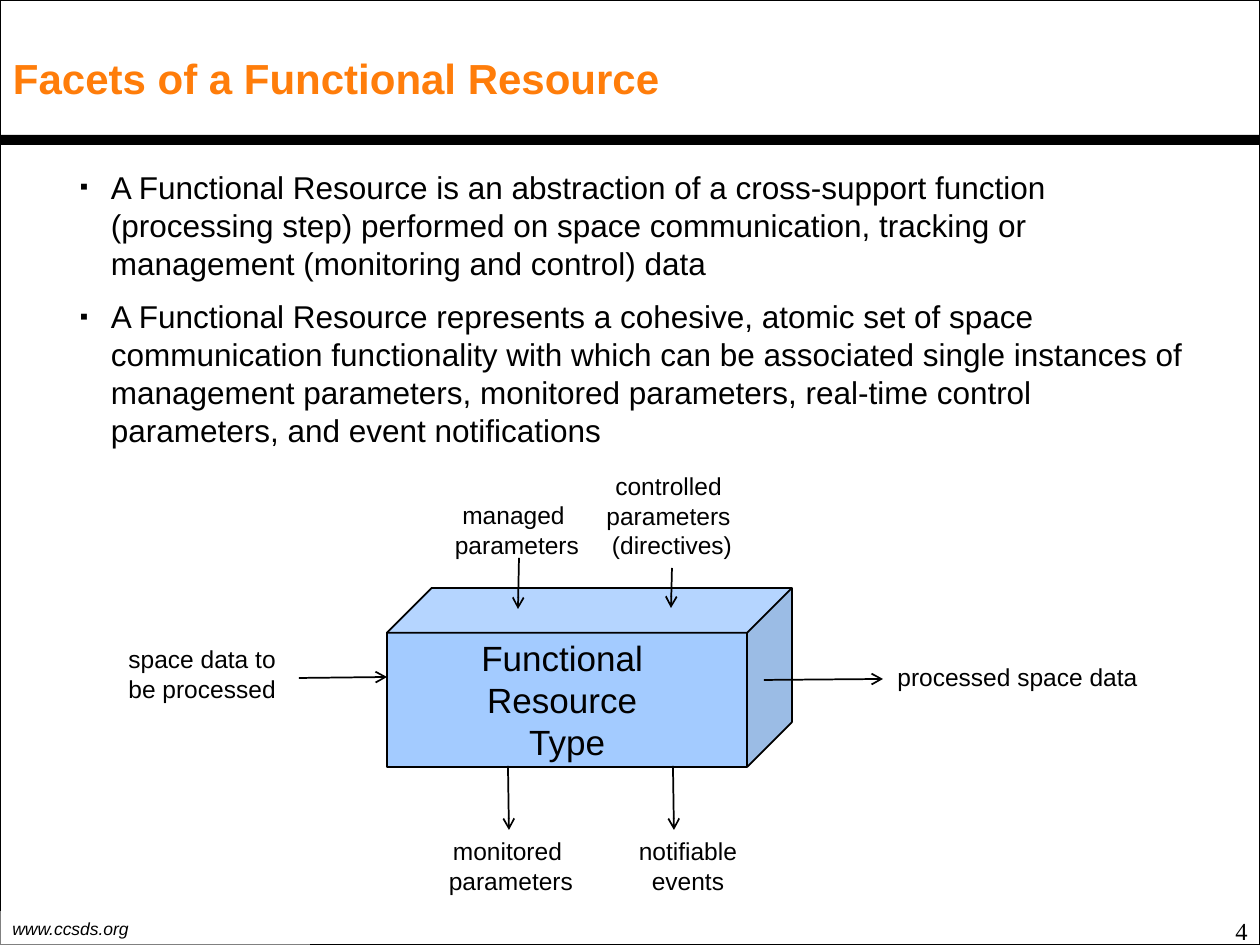
"""Build the slide on the facets of a functional resource."""
from dataclasses import dataclass
from lxml.etree import SubElement
from pptx import Presentation
from pptx.dml.color import RGBColor
from pptx.enum.shapes import MSO_CONNECTOR, MSO_SHAPE
from pptx.enum.text import MSO_ANCHOR, MSO_AUTO_SIZE, PP_ALIGN
from pptx.oxml.ns import qn
from pptx.util import Pt

PX = 914400 / 126


@dataclass(frozen=True)
class Theme:
    """Hold the colours, fonts and type sizes."""
    ink: str = "000000"
    paper: str = "FFFFFF"
    accent: str = "FF7D0A"
    cube: str = "4899FF"
    sans: str = "Arial"
    serif: str = "Times New Roman"
    title: int = 24
    type: int = 20
    body: int = 18
    label: int = 14
    foot: int = 10


THEME = Theme()
TITLE = "Facets of a Functional Resource"
POINTS = [
    "A Functional Resource is an abstraction of a cross-support function "
    "(processing step) performed on space communication, tracking or "
    "management (monitoring and control) data",
    "A Functional Resource represents a cohesive, atomic set of space "
    "communication functionality with which can be associated single "
    "instances of management parameters, monitored parameters, real-time "
    "control parameters, and event notifications",
]
LABELS = [
    ("space data to\nbe processed", (116, 638, 180, 72), PP_ALIGN.LEFT),
    ("processed space data", (885, 656, 270, 43), PP_ALIGN.LEFT),
    ("managed \nparameters", (442, 494, 150, 72), PP_ALIGN.CENTER),
    ("controlled \nparameters \n(directives)", (592, 465, 160, 102),
     PP_ALIGN.CENTER),
    ("monitored \nparameters", (436, 830, 150, 72), PP_ALIGN.CENTER),
    ("notifiable\nevents", (624, 830, 128, 72), PP_ALIGN.CENTER),
]
ARROWS = [
    (299, 678, 387, 677),
    (764, 680, 883, 679),
    (519, 558, 518, 609),
    (672, 568, 671, 608),
    (508, 766, 509, 830),
    (673, 766, 674, 830),
]


def emu(*sizes):
    """Turn pixels into EMU."""
    return [round(size * PX) for size in sizes]


def tint(fill, color, alpha=100):
    """Fill with a colour at a given opacity in percent."""
    fill.solid()
    fill.fore_color.rgb = RGBColor.from_string(color)
    if alpha < 100:
        node = fill._xPr.find(qn("a:solidFill"))[0]
        SubElement(node, qn("a:alpha")).set("val", str(alpha * 1000))


def style(frame, size, font=THEME.sans, color=THEME.ink, bold=False,
          slant=False, align=PP_ALIGN.LEFT):
    """Format every paragraph and run of a text frame."""
    for para in frame.paragraphs:
        para.alignment = align
        for run in para.runs:
            face = run.font
            face.name, face.size = font, Pt(size)
            face.bold, face.italic = bold, slant
            face.color.rgb = RGBColor.from_string(color)


def inset(frame, left, top, right, bottom):
    """Set the margins of a text frame."""
    (frame.margin_left, frame.margin_top,
     frame.margin_right, frame.margin_bottom) = emu(left, top, right, bottom)


def place(shape, left, top, width, height):
    """Move and size a placeholder."""
    (shape.left, shape.top,
     shape.width, shape.height) = emu(left, top, width, height)


def add_box(slide, kind, area, fill=None, alpha=100, line=False):
    """Add a preset shape with optional fill and outline."""
    box = slide.shapes.add_shape(kind, *emu(*area))
    box.shadow.inherit = False
    if fill:
        tint(box.fill, fill, alpha)
    else:
        box.fill.background()
    if line:
        tint(box.line.fill, THEME.ink)
        box.line.width = Pt(1)
    else:
        box.line.fill.background()
    return box


def add_text(slide, text, area, wrap=False, **look):
    """Add a text box."""
    frame = slide.shapes.add_textbox(*emu(*area)).text_frame
    frame.word_wrap = wrap
    frame.text = text
    style(frame, THEME.label, **look)


def add_arrow(slide, *ends):
    """Add a thin line with an open arrowhead at its end."""
    arrow = slide.shapes.add_connector(MSO_CONNECTOR.STRAIGHT, *emu(*ends))
    tint(arrow.line.fill, THEME.ink)
    arrow.line.width = Pt(1)
    SubElement(arrow.line._get_or_add_ln(), qn("a:tailEnd")).set(
        "type", "arrow")
    SubElement(arrow._element.spPr, qn("a:effectLst"))


def add_mark(para):
    """Give a paragraph a hanging square bullet."""
    props = para._p.get_or_add_pPr()
    indent = emu(31)[0]
    props.set("marL", str(indent))
    props.set("indent", str(-indent))
    tone = SubElement(props, qn("a:buClr"))
    SubElement(tone, qn("a:srgbClr")).set("val", THEME.ink)
    SubElement(props, qn("a:buSzPct")).set("val", "75000")
    SubElement(props, qn("a:buFont")).set("typeface", THEME.sans)
    SubElement(props, qn("a:buChar")).set("char", "▪")


def set_title(shape):
    """Fill the title placeholder."""
    place(shape, 0, 35, 1008, 85)
    frame = shape.text_frame
    frame.text = TITLE
    frame.word_wrap = True
    frame.auto_size = MSO_AUTO_SIZE.NONE
    frame.vertical_anchor = MSO_ANCHOR.MIDDLE
    inset(frame, 13, 6, 13, 6)
    style(frame, THEME.title, color=THEME.accent, bold=True)


def set_body(shape):
    """Fill the body placeholder with the bullet points."""
    place(shape, 28, 129, 1184, 349)
    frame = shape.text_frame
    frame.text = "\n".join(POINTS)
    frame.word_wrap = True
    frame.auto_size = MSO_AUTO_SIZE.NONE
    inset(frame, 52, 39, 13, 6)
    for rank, para in enumerate(frame.paragraphs):
        para.space_before = Pt(9 if rank else 0)
        add_mark(para)
    style(frame, THEME.body)


def add_frame(slide):
    """Add the border, the footer and the rule under the title."""
    add_box(slide, MSO_SHAPE.RECTANGLE, (0, 0, 1260, 945), line=True)
    foot = add_box(slide, MSO_SHAPE.RECTANGLE, (0, 911, 310, 34),
                   THEME.paper, 50)
    foot.text_frame.text = "www.ccsds.org"
    foot.text_frame.vertical_anchor = MSO_ANCHOR.MIDDLE
    style(foot.text_frame, THEME.foot, slant=True)
    add_box(slide, MSO_SHAPE.RECTANGLE, (0, 135, 1260, 10), THEME.ink)


def add_cube(slide):
    """Add the cube that stands for the resource type."""
    cube = add_box(slide, MSO_SHAPE.CUBE, (387, 588, 405, 179),
                   THEME.cube, 50, line=True)
    cube.adjustments[0] = 0.25
    frame = cube.text_frame
    frame.text = "Functional \nResource \nType"
    frame.word_wrap = False
    frame.vertical_anchor = MSO_ANCHOR.MIDDLE
    style(frame, THEME.type, align=PP_ALIGN.CENTER)


def main():
    """Build and save the slide."""
    deck = Presentation()
    deck.slide_width, deck.slide_height = emu(1260, 945)
    slide = deck.slides.add_slide(deck.slide_layouts[1])
    add_frame(slide)
    set_title(slide.shapes.title)
    set_body(slide.placeholders[1])
    add_text(slide, "4", (966, 910, 294, 59), wrap=True,
             font=THEME.serif, align=PP_ALIGN.RIGHT)
    add_cube(slide)
    for text, area, align in LABELS:
        add_text(slide, text, area, align=align)
    for ends in ARROWS:
        add_arrow(slide, *ends)
    deck.save("out.pptx")


if __name__ == "__main__":
    main()
